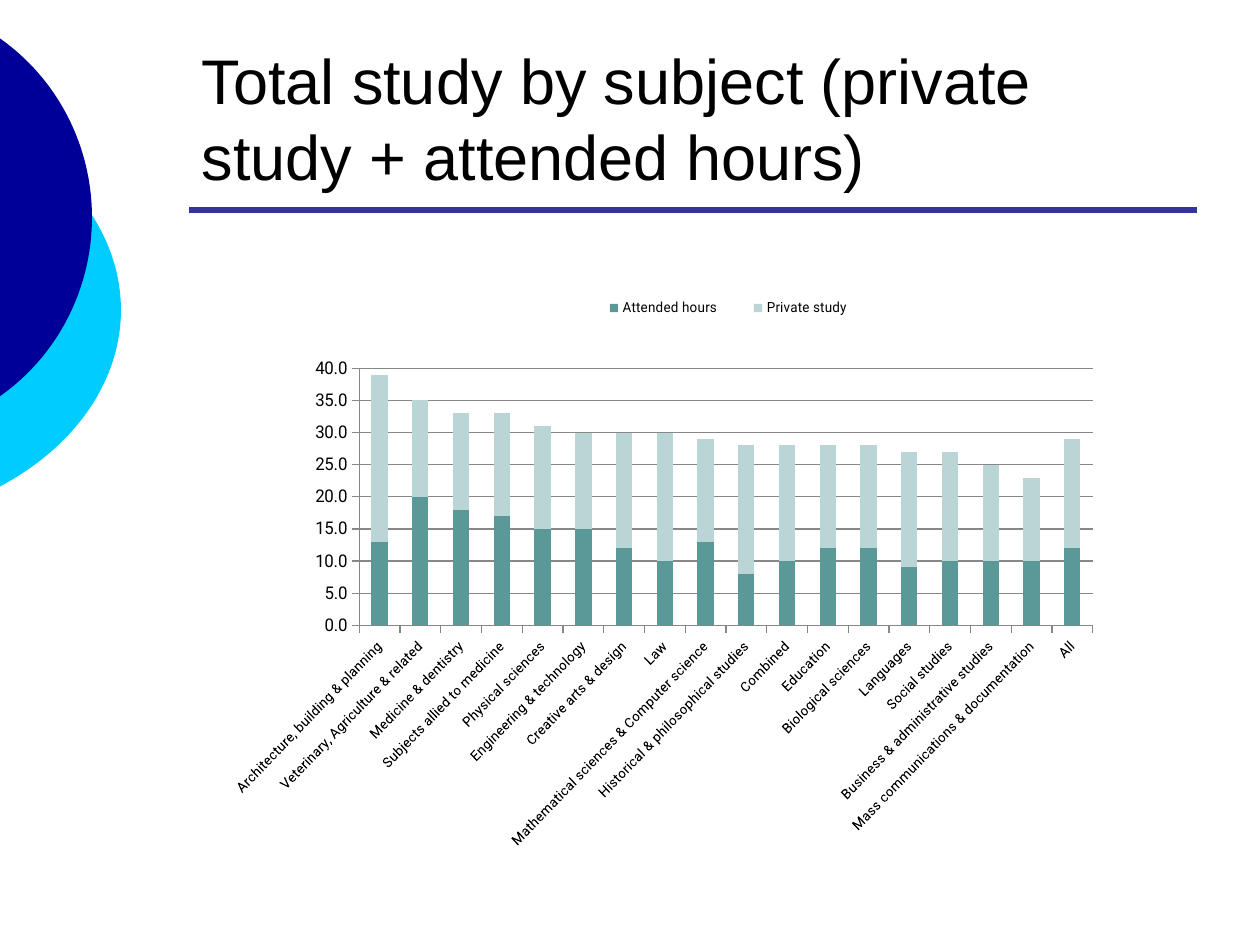
from lxml import etree
from pptx import Presentation
from pptx.chart.data import CategoryChartData
from pptx.dml.color import RGBColor
from pptx.enum.chart import XL_CHART_TYPE, XL_LEGEND_POSITION, XL_TICK_MARK
from pptx.enum.shapes import MSO_CONNECTOR, MSO_SHAPE
from pptx.enum.text import MSO_ANCHOR, MSO_AUTO_SIZE, PP_ALIGN
from pptx.oxml.ns import qn
from pptx.util import Inches, Pt

STACKED = XL_CHART_TYPE.COLUMN_STACKED
OUTSIDE = XL_TICK_MARK.OUTSIDE
NONE = XL_TICK_MARK.NONE
OVAL = MSO_SHAPE.OVAL

BLACK = RGBColor(0x00, 0x00, 0x00)
NAVY = RGBColor(0x00, 0x00, 0x99)
CYAN = RGBColor(0x00, 0xCC, 0xFF)
INDIGO = RGBColor(0x33, 0x33, 0x99)
GREY = RGBColor(0x87, 0x87, 0x87)
TEAL = RGBColor(0x5B, 0x98, 0x98)
PALE_TEAL = RGBColor(0xB9, 0xD5, 0xD5)

# Content
TITLE = "Total study by subject (private study + attended hours)"
SERIES = [("Attended hours", TEAL), ("Private study", PALE_TEAL)]
HOURS = [  # subject, attended, private
    ("Architecture, building & planning", 13, 26),
    ("Veterinary, Agriculture & related", 20, 15),
    ("Medicine & dentistry", 18, 15),
    ("Subjects allied to medicine", 17, 16),
    ("Physical sciences", 15, 16),
    ("Engineering & technology", 15, 15),
    ("Creative arts & design", 12, 18),
    ("Law", 10, 20),
    ("Mathematical sciences & Computer science", 13, 16),
    ("Historical & philosophical studies", 8, 20),
    ("Combined", 10, 18),
    ("Education", 12, 16),
    ("Biological sciences", 12, 16),
    ("Languages", 9, 18),
    ("Social studies", 10, 17),
    ("Business & administrative studies", 10, 15),
    ("Mass communications & documentation", 10, 13),
    ("All", 12, 17),
]
# Discs bleeding over the left edge: left, top, width, height, colour
DISCS = [(-3.54, 0.75, 4.5, 3.42, CYAN), (-2.65, 0, 3.38, 3.45, NAVY)]
PLOT_LAYOUT = (0.11, 0.211, 0.874, 0.405)
LEGEND_LAYOUT = (0.37, 0.096, 0.36, 0.04)


def set_text(tf, text, size, font="Arial", color=BLACK):
    tf.text = text
    p = tf.paragraphs[0]
    p.alignment = PP_ALIGN.LEFT
    set_font(p.runs[0].font, size, font, color)


def set_font(font, size, name="Roboto", color=BLACK):
    font.size = Pt(size)
    font.name = name
    font.bold = False
    font.color.rgb = color


def add_disc(slide, left, top, width, height, color):
    sp = slide.shapes.add_shape(
        OVAL, Inches(left), Inches(top), Inches(width), Inches(height))
    sp.shadow.inherit = False
    sp.fill.solid()
    sp.fill.fore_color.rgb = color
    sp.line.fill.background()


def set_layout(parent, index, box, inner=False):
    for old in parent.findall(qn("c:layout")):
        parent.remove(old)
    layout = etree.Element(qn("c:layout"))
    manual = etree.SubElement(layout, qn("c:manualLayout"))
    entries = [("layoutTarget", "inner")] if inner else []
    entries += [("xMode", "edge"), ("yMode", "edge")]
    entries += zip("xywh", map(str, box))
    for tag, val in entries:
        etree.SubElement(manual, qn("c:" + tag)).set("val", val)
    parent.insert(index, layout)


def style_line(line):
    line.color.rgb = GREY
    line.width = Pt(0.75)


def style_axis(axis, size):
    set_font(axis.tick_labels.font, size)
    axis.major_tick_mark = OUTSIDE
    axis.minor_tick_mark = NONE
    style_line(axis.format.line)


def add_hours_chart(slide):
    data = CategoryChartData(number_format="0.0")
    data.categories = [row[0] for row in HOURS]
    for i, (name, _) in enumerate(SERIES, 1):
        data.add_series(name, [row[i] for row in HOURS])
    chart = slide.shapes.add_chart(
        STACKED, Inches(1.85), Inches(1.86), Inches(6.93), Inches(5.04), data).chart
    chart.has_title = False
    set_font(chart.font, 18, "DejaVu Sans")

    plot = chart.plots[0]
    plot.overlap = 100
    plot.gap_width = 150
    plot.vary_by_categories = False
    for series, (_, color) in zip(plot.series, SERIES):
        series.format.fill.solid()
        series.format.fill.fore_color.rgb = color

    # Axes, with slanted subject labels
    subjects = chart.category_axis
    style_axis(subjects, 8)
    subjects._element.find(".//" + qn("a:bodyPr")).set("rot", "-2700000")
    axis = chart.value_axis
    style_axis(axis, 10)
    axis.minimum_scale, axis.maximum_scale, axis.major_unit = 0, 40, 5
    axis.tick_labels.number_format = "#,##0.0"
    axis.tick_labels.number_format_is_linked = False
    axis.has_major_gridlines = True
    style_line(axis.major_gridlines.format.line)

    # Legend and plot positions
    chart.has_legend = True
    legend = chart.legend
    legend.position = XL_LEGEND_POSITION.BOTTOM
    legend.include_in_layout = False
    set_font(legend.font, 8)
    set_layout(legend._element, 1, LEGEND_LAYOUT)
    plot_area = chart._chartSpace.find(".//" + qn("c:plotArea"))
    set_layout(plot_area, 0, PLOT_LAYOUT, inner=True)


def main():
    prs = Presentation()
    prs.slide_width, prs.slide_height = Inches(10), Inches(7.5)
    slide = prs.slides.add_slide(prs.slide_layouts[5])

    # Decoration
    for disc in DISCS:
        add_disc(slide, *disc)
    rule = slide.shapes.add_connector(
        MSO_CONNECTOR.STRAIGHT, Inches(1.5), Inches(1.67), Inches(9.5), Inches(1.67))
    rule.line.color.rgb = INDIGO
    rule.line.width = Pt(3.5)
    etree.SubElement(rule._element.spPr, qn("a:effectLst"))

    # Title
    title = slide.shapes.title
    title.left, title.top = Inches(1.5), Inches(0.33)
    title.width, title.height = Inches(8), Inches(1.25)
    tf = title.text_frame
    tf.word_wrap = True
    tf.auto_size = MSO_AUTO_SIZE.NONE
    tf.vertical_anchor = MSO_ANCHOR.BOTTOM
    set_text(tf, TITLE, 36)

    add_hours_chart(slide)
    prs.save("out.pptx")


if __name__ == "__main__":
    main()
